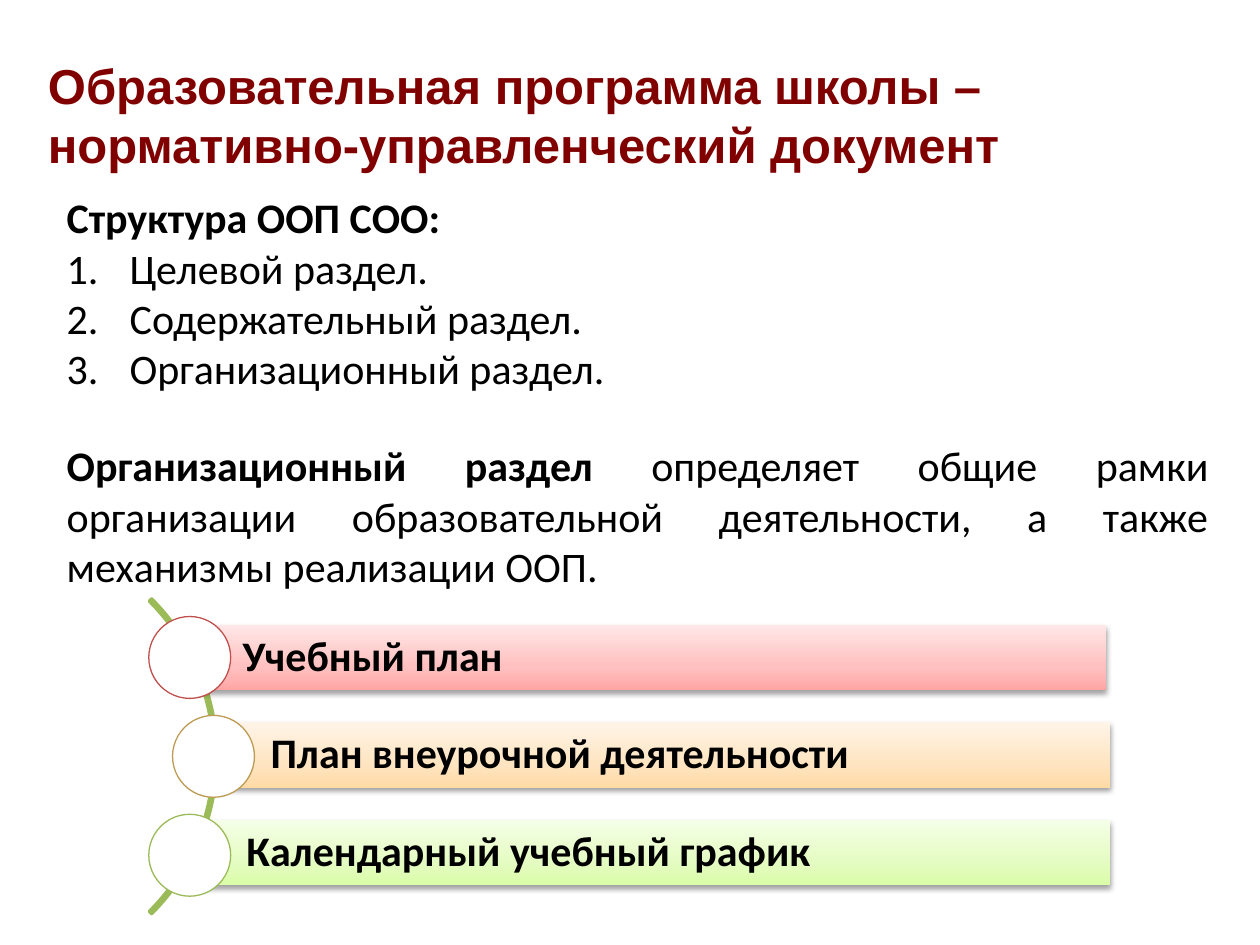
from collections import namedtuple
from dataclasses import dataclass

import pptx
import pptx.dml.color
import pptx.enum.shapes
import pptx.enum.text
import pptx.oxml
import pptx.oxml.ns
import pptx.util
from pptx.util import Pt

Box = namedtuple("Box", "left top width height")
Section = namedtuple("Section", "label bar_left bar_width circle_left outline gradient")


@dataclass(frozen=True)
class Theme:
    """Colours, fonts and type sizes of the slide."""
    title_font: str = "Arial"
    body_font: str = "Calibri"
    title_size: int = 28
    body_size: int = 24
    title: str = "800000"
    text: str = "000000"
    circle: str = "FFFFFF"
    arc: str = "9BBB59"
    red: str = "C0504D"
    gold: str = "BD9B53"
    green: str = "9BBB59"
    red_fade: tuple = ("FFA6A5", "FFC0BF", "FFE7E7")
    gold_fade: tuple = ("FFDAA5", "FEE4C0", "FFF4E7")
    green_fade: tuple = ("DAFDA7", "E4FCC2", "F5FFE7")


THEME = Theme()
HEADING = "Образовательная программа школы – нормативно-управленческий документ"
STRUCTURE = ("Целевой раздел.", "Содержательный раздел.", "Организационный раздел.")
SECTIONS = (
    Section("Учебный план", 23.7, 523.4, 0, THEME.red, THEME.red_fade),
    Section("План внеурочной деятельности", 39.6, 509.8, 13.6, THEME.gold, THEME.gold_fade),
    Section("Календарный учебный график", 25.9, 523.4, 0, THEME.green, THEME.green_fade),
)


def points(box):
    """Return the sides of a box as lengths."""
    return [Pt(side) for side in box]


def colour(value):
    """Return a hex value as a colour."""
    return pptx.dml.color.RGBColor.from_string(value)


def add_span(para, text, bold=False, font=THEME.body_font, size=THEME.body_size, ink=THEME.text):
    """Add one formatted run to a paragraph."""
    span = para.add_run()
    span.text = text
    span.font.name = font
    span.font.size = Pt(size)
    span.font.bold = bold
    span.font.color.rgb = colour(ink)


def number_para(para, indent):
    """Give a paragraph an automatic number and a hanging indent."""
    properties = para._p.get_or_add_pPr()
    properties.set("marL", str(Pt(indent)))
    properties.set("indent", str(-Pt(indent)))
    properties.append(pptx.oxml.parse_xml(
        f'<a:buAutoNum {pptx.oxml.ns.nsdecls("a")} type="arabicPeriod"/>'))


def add_shape(slide, kind, box, line=None, weight=0.75):
    """Add a preset shape with no shadow and the given outline."""
    shape = slide.shapes.add_shape(kind, *points(box))
    shape.shadow.inherit = False
    if line:
        shape.line.color.rgb = colour(line)
        shape.line.width = Pt(weight)
    else:
        shape.line.fill.background()
    return shape


def fade_and_shade(shape, gradient):
    """Give a shape a three-stop vertical gradient and a soft shadow."""
    namespace = pptx.oxml.ns.nsdecls("a")
    stops = "".join(
        f'<a:gs pos="{position}"><a:srgbClr val="{value}"/></a:gs>'
        for position, value in zip((0, 35000, 100000), gradient))
    properties = shape.element.spPr
    properties.find(pptx.oxml.ns.qn("a:prstGeom")).addnext(pptx.oxml.parse_xml(
        f'<a:gradFill {namespace} rotWithShape="1"><a:gsLst>{stops}</a:gsLst>'
        '<a:lin ang="16200000" scaled="1"/></a:gradFill>'))
    properties.find(pptx.oxml.ns.qn("a:effectLst")).append(pptx.oxml.parse_xml(
        f'<a:outerShdw {namespace} blurRad="{Pt(3.1)}" dist="{Pt(1.6)}" dir="5400000" '
        'rotWithShape="0"><a:srgbClr val="000000"><a:alpha val="38000"/></a:srgbClr>'
        '</a:outerShdw>'))


def add_text_frame(slide, box):
    """Add a wrapping text box and return its frame."""
    frame = slide.shapes.add_textbox(*points(box)).text_frame
    frame.word_wrap = True
    frame.auto_size = pptx.enum.text.MSO_AUTO_SIZE.SHAPE_TO_FIT_TEXT
    return frame


def place_title(slide, box):
    """Move and format the title placeholder."""
    title = slide.shapes.title
    title.left, title.top, title.width, title.height = points(box)
    frame = title.text_frame
    frame.auto_size = pptx.enum.text.MSO_AUTO_SIZE.SHAPE_TO_FIT_TEXT
    frame.vertical_anchor = pptx.enum.text.MSO_ANCHOR.TOP
    para = frame.paragraphs[0]
    para.alignment = pptx.enum.text.PP_ALIGN.LEFT
    add_span(para, HEADING, True, THEME.title_font, THEME.title_size, THEME.title)


def place_structure(slide, box):
    """Place the heading and the numbered list of parts."""
    frame = add_text_frame(slide, box)
    add_span(frame.paragraphs[0], "Структура ООП СОО:", True)
    for item in STRUCTURE:
        para = frame.add_paragraph()
        number_para(para, 36)
        add_span(para, item)


def place_definition(slide, box):
    """Place the justified definition of the organisational part."""
    para = add_text_frame(slide, box).paragraphs[0]
    para.alignment = pptx.enum.text.PP_ALIGN.JUSTIFY
    add_span(para, "Организационный раздел ", True)
    add_span(para, "определяет общие рамки организации образовательной деятельности, "
                   "а также механизмы реализации ООП.")


def place_bar(slide, box, section):
    """Place one labelled gradient bar."""
    bar = add_shape(slide, pptx.enum.shapes.MSO_SHAPE.RECTANGLE, box)
    fade_and_shade(bar, section.gradient)
    frame = bar.text_frame
    frame.word_wrap = True
    frame.vertical_anchor = pptx.enum.text.MSO_ANCHOR.MIDDLE
    frame.margin_left = Pt(30)
    frame.margin_top = frame.margin_right = frame.margin_bottom = Pt(5)
    para = frame.paragraphs[0]
    para.alignment = pptx.enum.text.PP_ALIGN.LEFT
    para.line_spacing = 0.9
    add_span(para, section.label, True)


def place_sections(slide, box):
    """Place the arc with its three bars and circles."""
    diameter, circle, bar_height = 254.2, 46.8, 37.4
    middle = box.top + box.height / 2
    arc = add_shape(
        slide, pptx.enum.shapes.MSO_SHAPE.BLOCK_ARC,
        Box(box.left - 215.3, middle - diameter / 2, diameter, diameter), THEME.arc, 2)
    arc.fill.solid()
    arc.fill.fore_color.rgb = colour(THEME.arc)
    for index, value in enumerate((189, 27, 0.007)):
        arc.adjustments[index] = value
    for row, section in enumerate(SECTIONS, start=-1):
        bar_top = middle - 0.7 + row * 55.8 - bar_height / 2
        place_bar(slide, Box(box.left + section.bar_left, bar_top,
                             section.bar_width, bar_height), section)
        disc = add_shape(
            slide, pptx.enum.shapes.MSO_SHAPE.OVAL,
            Box(box.left + section.circle_left, middle + row * 56.5 - circle / 2,
                circle, circle), section.outline)
        disc.fill.solid()
        disc.fill.fore_color.rgb = colour(THEME.circle)


def main():
    """Build the slide and save the deck."""
    deck = pptx.Presentation()
    deck.slide_width, deck.slide_height = Pt(720), Pt(540)
    slide = deck.slides.add_slide(deck.slide_layouts[5])
    place_title(slide, Box(20.2, 28, 686, 75))
    place_structure(slide, Box(31, 106, 667.5, 124))
    place_definition(slide, Box(31, 247.7, 666.7, 94.3))
    place_sections(slide, Box(85, 342, 550, 180.4))
    deck.save("out.pptx")


if __name__ == "__main__":
    main()
